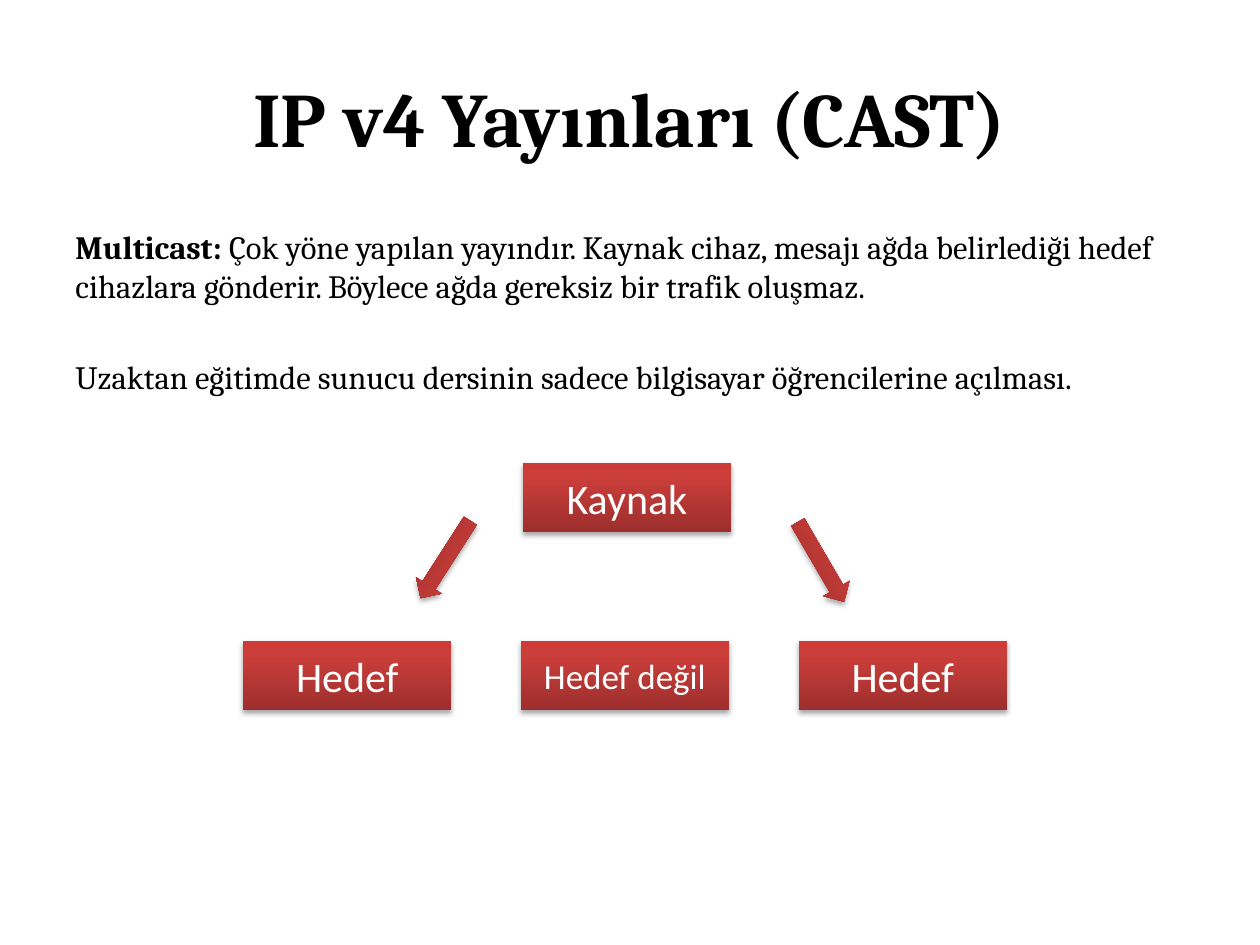
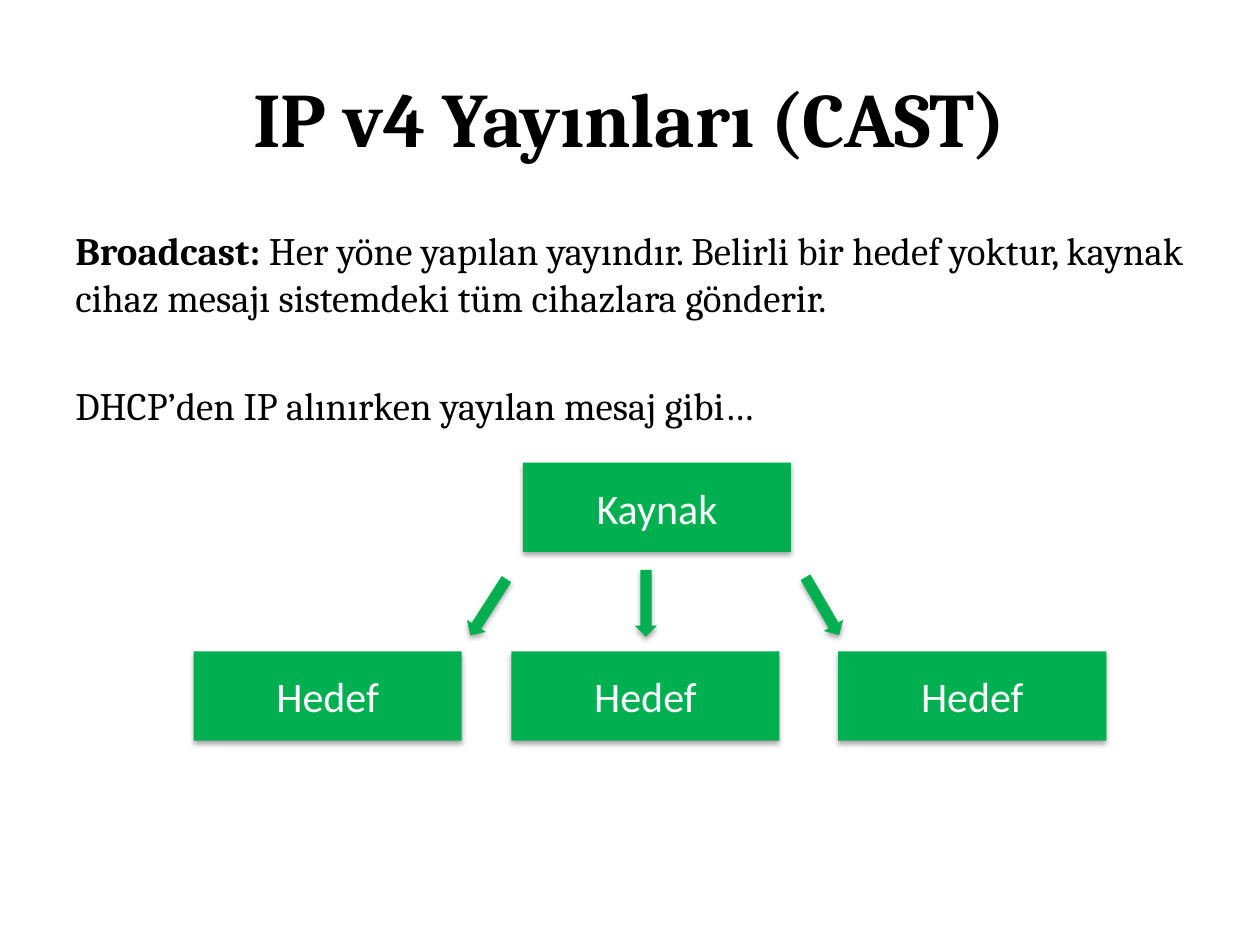
import copy

import lxml.etree
import pptx
import pptx.dml.color
import pptx.enum.shapes
import pptx.enum.text
import pptx.oxml.ns
import pptx.util

Pt = pptx.util.Pt
qn = pptx.oxml.ns.qn
SHAPES = pptx.enum.shapes.MSO_SHAPE
ALIGN = pptx.enum.text.PP_ALIGN
ANCHOR = pptx.enum.text.MSO_ANCHOR

COLORS = {
    "text": "000000",
    "label": "FFFFFF",
    "shadow": "000000",
    "red_dark": "9C2F2D",
    "red_mid": "CB3E3A",
    "red_light": "CE3B37",
    "green": "00B050",
}
HEADING_FONT, LABEL_FONT = "Cambria", "Calibri"
RED = [(0, "red_dark"), (0.8, "red_mid"), (1, "red_light")]
GREEN = [(0, "green")]

TITLE = "IP v4 Yayınları (CAST)"
TITLE_AREA = (36, 21.6, 648, 90)
BODY_AREA = (36, 126, 648, 126.7)
SOURCE = ("Kaynak", 24)
SOURCE_AT = (298.8, 264.4)
TARGET = ("Hedef", 24)

CASTS = [
    {
        "term": "Multicast: ",
        "meaning": "Çok yöne yapılan yayındır. Kaynak cihaz, mesajı ağda belirlediği hedef "
                   "cihazlara gönderir. Böylece ağda gereksiz bir trafik oluşmaz.",
        "example": "Uzaktan eğitimde sunucu dersinin sadece bilgisayar öğrencilerine açılması.",
        "text_size": 18.6,
        "paint": RED,
        "box_size": (119, 39.6),
        "target_top": 366.4,
        "targets": [(139, TARGET), (297.6, ("Hedef değil", 20)), (456.4, TARGET)],
        "arrow_size": (52.6, 17.4),
        "arrows": [(228.2, 311, 122.7), (442.8, 312.4, 59.8)],
    },
    {
        "term": "Broadcast: ",
        "meaning": "Her yöne yapılan yayındır. Belirli bir hedef yoktur, kaynak cihaz mesajı "
                   "sistemdeki tüm cihazlara gönderir.",
        "example": "DHCP’den IP alınırken yayılan mesaj gibi…",
        "text_size": 22.2,
        "paint": GREEN,
        "box_size": (153.2, 51),
        "target_top": 372.2,
        "targets": [(110.6, TARGET), (292.2, TARGET), (479, TARGET)],
        "arrow_size": (38.2, 12.8),
        "arrows": [(350, 338.4, 90), (260, 340.6, 122.7), (450.8, 340, 59.8)],
    },
]


def rgb(name):
    return pptx.dml.color.RGBColor.from_string(COLORS[name])


def add_run(paragraph, text, size, font, color, bold=False):
    run = paragraph.add_run()
    run.text = text
    run.font.size = Pt(size)
    run.font.name = font
    run.font.bold = bold
    run.font.color.rgb = rgb(color)


def add_text_area(slide, area, anchor):
    frame = slide.shapes.add_textbox(*map(Pt, area)).text_frame
    frame.word_wrap = True
    frame.vertical_anchor = anchor
    return frame


def paint_shape(shape, stops):
    if len(stops) == 1:
        shape.fill.solid()
        shape.fill.fore_color.rgb = rgb(stops[0][1])
        return
    shape.fill.gradient()
    shape.fill.gradient_angle = 90
    stop_list = shape.element.spPr.find(".//" + qn("a:gsLst"))
    while len(stop_list) < len(stops):
        stop_list.append(copy.deepcopy(stop_list[-1]))
    for stop, (position, color) in zip(shape.fill.gradient_stops, stops):
        stop.position = position
        stop.color.rgb = rgb(color)


def add_shadow(shape):
    shape.shadow.inherit = False
    effects = shape.element.spPr.find(qn("a:effectLst"))
    shadow = lxml.etree.SubElement(
        effects, qn("a:outerShdw"), blurRad=str(Pt(3.1)), dist=str(Pt(1.8)),
        dir="5400000", rotWithShape="0")
    color = lxml.etree.SubElement(shadow, qn("a:srgbClr"), val=COLORS["shadow"])
    lxml.etree.SubElement(color, qn("a:alpha"), val="35000")


def add_block(slide, preset, place, size, stops):
    block = slide.shapes.add_shape(preset, *map(Pt, place + size))
    paint_shape(block, stops)
    block.line.fill.background()
    add_shadow(block)
    return block


def add_device(slide, cast, place, label):
    device = add_block(slide, SHAPES.RECTANGLE, place, cast["box_size"], cast["paint"])
    device.text_frame.vertical_anchor = ANCHOR.MIDDLE
    paragraph = device.text_frame.paragraphs[0]
    paragraph.alignment = ALIGN.CENTER
    add_run(paragraph, *label, LABEL_FONT, "label")


def add_explanation(slide, cast):
    size = cast["text_size"]
    body = add_text_area(slide, BODY_AREA, ANCHOR.TOP)
    definition = body.paragraphs[0]
    add_run(definition, cast["term"], size, HEADING_FONT, "text", True)
    add_run(definition, cast["meaning"], size, HEADING_FONT, "text")
    example = body.add_paragraph()
    example.space_before = Pt(1.6 * size)
    add_run(example, cast["example"], size, HEADING_FONT, "text")


def add_cast_slide(deck, cast):
    slide = deck.slides.add_slide(deck.slide_layouts[6])
    heading = add_text_area(slide, TITLE_AREA, ANCHOR.MIDDLE).paragraphs[0]
    heading.alignment = ALIGN.CENTER
    add_run(heading, TITLE, 44, HEADING_FONT, "text", True)
    add_explanation(slide, cast)
    add_device(slide, cast, SOURCE_AT, SOURCE)
    for left, label in cast["targets"]:
        add_device(slide, cast, (left, cast["target_top"]), label)
    for left, top, angle in cast["arrows"]:
        arrow = add_block(slide, SHAPES.RIGHT_ARROW, (left, top), cast["arrow_size"], cast["paint"])
        arrow.rotation = angle


def main():
    deck = pptx.Presentation()
    deck.slide_width, deck.slide_height = Pt(720), Pt(540)
    for cast in CASTS:
        add_cast_slide(deck, cast)
    deck.save("out.pptx")


if __name__ == "__main__":
    main()
